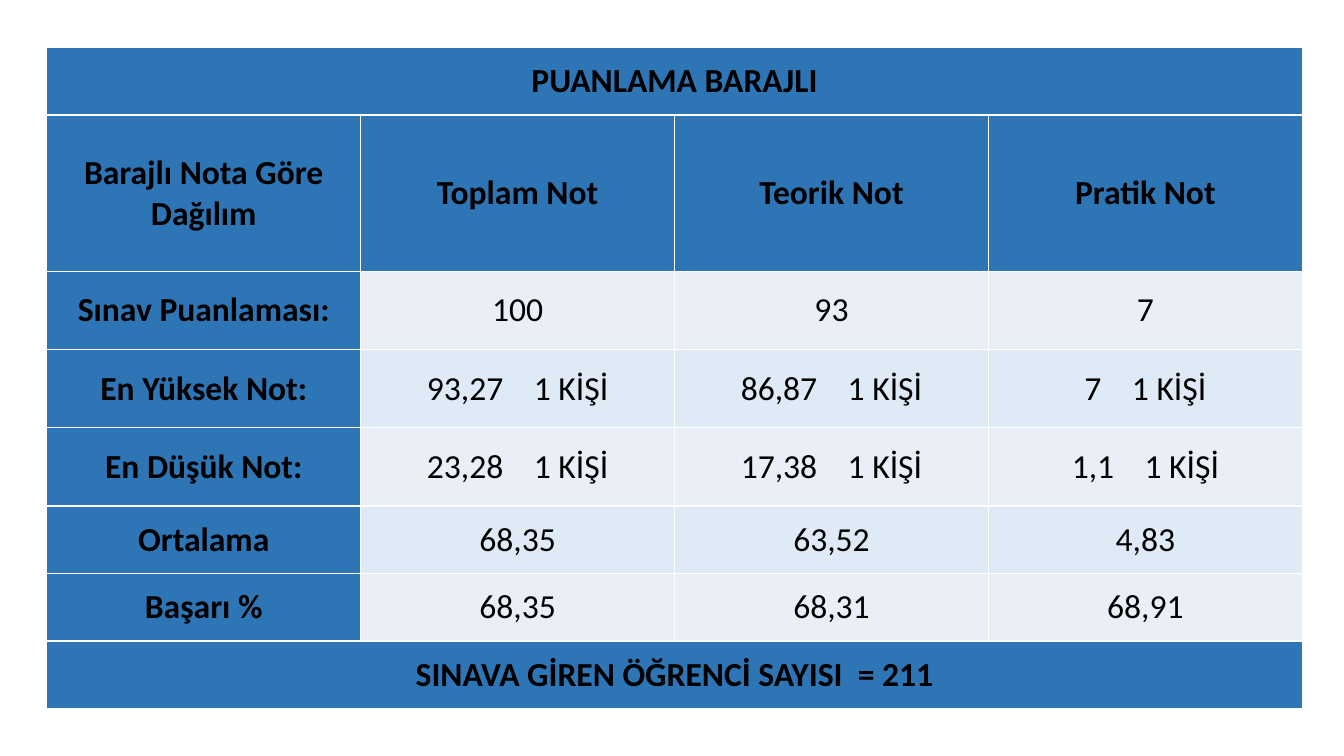
from lxml import etree
from pptx import Presentation
from pptx.dml.color import RGBColor
from pptx.enum.text import MSO_ANCHOR, PP_ALIGN
from pptx.oxml.ns import qn
from pptx.util import Cm, Pt

MIDDLE = MSO_ANCHOR.MIDDLE
CENTER = PP_ALIGN.CENTER
BLUE, WHITE, BLACK = "2E75B6", "FFFFFF", "000000"
BANDS = ["EAEFF7", "DEEBF7"]
GAP = "1630"

TITLE = "PUANLAMA BARAJLI"
TOTAL = "SINAVA GİREN ÖĞRENCİ SAYISI  = 211"
ONE = "1 KİŞİ"
ROWS = [
    [TITLE],
    ["Barajlı Nota Göre Dağılım", "Toplam Not", "Teorik Not", "Pratik Not"],
    ["Sınav Puanlaması:", "100", "93", "7"],
    ["En Yüksek Not:", ("93,27", ONE), ("86,87", ONE), ("7", ONE)],
    ["En Düşük Not:", ("23,28", ONE), ("17,38", ONE), ("1,1", ONE)],
    ["Ortalama", "68,35", "63,52", "4,83"],
    ["Başarı %", "68,35", "68,31", "68,91"],
    [TOTAL],
]
HEIGHTS = [1.7, 3.94, 1.97, 1.97, 1.97, 1.7, 1.7, 1.7]
COLS = 4


def color(code):
    return RGBColor.from_string(code)


def add_edges(cell):
    props = cell._tc.get_or_add_tcPr()
    for side in ("lnL", "lnR", "lnT", "lnB"):
        line = etree.SubElement(props, qn(f"a:{side}"), w=str(Pt(1)))
        fill = etree.SubElement(line, qn("a:solidFill"))
        etree.SubElement(fill, qn("a:srgbClr"), val=WHITE)


def write_text(para, text):
    if isinstance(text, str):
        para.add_run().text = text
        return
    score, count = text
    para.add_run().text = score
    space = para.add_run()
    space.text = " "
    space.font._element.set("spc", GAP)
    para.add_run().text = count


def style_cell(cell, text, fill, bold):
    add_edges(cell)
    cell.fill.solid()
    cell.fill.fore_color.rgb = color(fill)
    cell.vertical_anchor = MIDDLE
    cell.margin_left = cell.margin_right = 0
    cell.margin_top = cell.margin_bottom = 0
    para = cell.text_frame.paragraphs[0]
    para.alignment = CENTER
    font = para.font
    font.name, font.size, font.bold = "Calibri", Pt(24), bold
    font.color.rgb = color(BLACK)
    if text:
        write_text(para, text)


def add_scores(slide, left, top, width):
    frame = slide.shapes.add_table(
        len(ROWS), COLS, Cm(left), Cm(top), Cm(width), Cm(sum(HEIGHTS)))
    table = frame.table
    table.first_row = table.horz_banding = False
    for col in table.columns:
        col.width = Cm(width / COLS)
    for r, (texts, height) in enumerate(zip(ROWS, HEIGHTS)):
        table.rows[r].height = Cm(height)
        wide = len(texts) == 1
        if wide:
            table.cell(r, 0).merge(table.cell(r, COLS - 1))
        for c in range(COLS):
            head = wide or r == 1 or c == 0
            text = texts[c] if c < len(texts) else ""
            fill = BLUE if head else BANDS[r % 2]
            style_cell(table.cell(r, c), text, fill, head)


def main():
    deck = Presentation()
    deck.slide_width, deck.slide_height = Cm(33.87), Cm(19.05)
    slide = deck.slides.add_slide(deck.slide_layouts[6])
    add_scores(slide, 1.18, 1.2, 31.64)
    deck.save("out.pptx")


if __name__ == "__main__":
    main()
